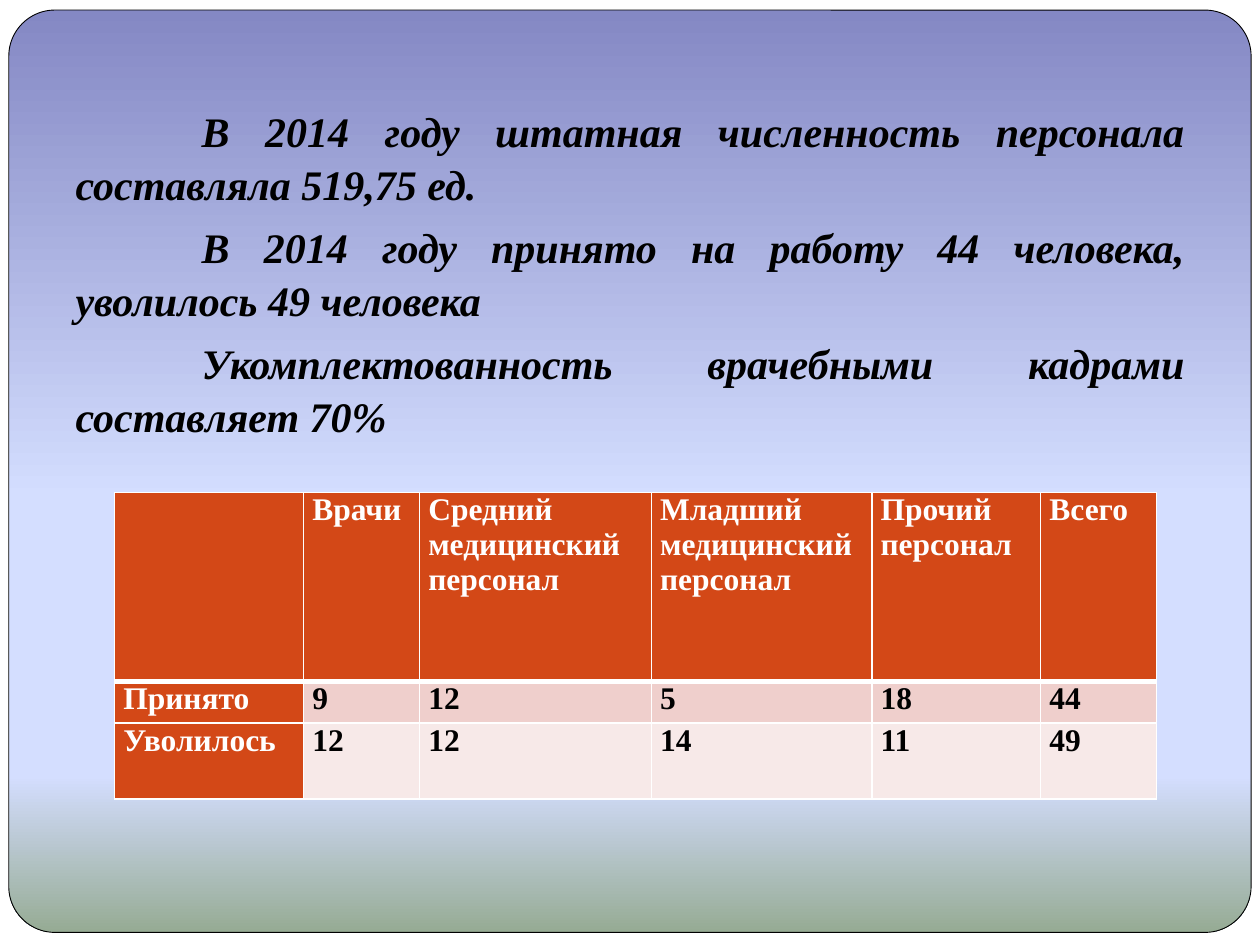
from lxml.etree import SubElement
from pptx import Presentation
from pptx.dml.color import RGBColor
from pptx.enum.shapes import MSO_SHAPE as Preset
from pptx.enum.text import MSO_ANCHOR as Anchor, MSO_AUTO_SIZE as AutoSize, PP_ALIGN as Align
from pptx.oxml import parse_xml
from pptx.oxml.ns import nsdecls, qn
from pptx.util import Inches, Pt

COLUMNS, ROWS = 100, 75
BACKDROP = [(0, "8488C4"), (53, "D4DEFF"), (83, "D4DEFF"), (100, "96AB94")]
STATEMENTS = [
    "В 2014 году штатная численность персонала составляла 519,75 ед.",
    "В 2014 году принято на работу 44 человека, уволилось 49 человека",
    "Укомплектованность врачебными кадрами составляет 70%",
]
STAFF = [
    ["", "Врачи", "Средний медицинский персонал", "Младший медицинский персонал",
     "Прочий персонал", "Всего"],
    ["Принято", "9", "12", "5", "18", "44"],
    ["Уволилось", "12", "12", "14", "11", "49"],
]
STAFF_WIDTHS = [15, 9.2, 18.4, 17.5, 13.4, 9.2]
STAFF_HEIGHTS = [15, 3.3, 6]


def color(hex_value):
    return RGBColor.from_string(hex_value)


class StaffSlide:
    font = "Times New Roman"
    ink, paper, accent = "000000", "FFFFFF", "D34817"
    bands = ["EFCFCC", "F7E9E8"]

    def __init__(self, deck):
        self.slide = deck.slides.add_slide(deck.slide_layouts[1])
        self.column = deck.slide_width / COLUMNS
        self.row = deck.slide_height / ROWS
        title = self.slide.shapes.title
        title.element.getparent().remove(title.element)

    def area(self, left, top, width, height):
        """Turn grid columns and rows into slide lengths."""
        return (round(left * self.column), round(top * self.row),
                round(width * self.column), round(height * self.row))

    def set_text(self, paragraph, text, size, ink, italic=False):
        paragraph.text = text
        paragraph.alignment = Align.JUSTIFY
        for run in paragraph.runs:
            font = run.font
            font.name, font.size = self.font, Pt(size)
            font.bold, font.italic = True, italic
            font.color.rgb = color(ink)

    def backdrop(self, cells, stops):
        """Put a rounded panel with a vertical gradient behind everything."""
        panel = self.slide.shapes.add_shape(Preset.ROUNDED_RECTANGLE, *self.area(*cells))
        panel.adjustments[0] = 0.05
        panel.shadow.inherit = False
        panel.line.color.rgb = color(self.ink)
        panel.line.width = Pt(0.5)
        panel.fill.gradient()
        panel.fill.gradient_angle = 270
        stop_list = panel.element.spPr.find(".//" + qn("a:gsLst"))
        stop_list.clear()
        for share, shade in stops:
            stop = SubElement(stop_list, qn("a:gs"), pos=str(share * 1000))
            SubElement(stop, qn("a:srgbClr"), val=shade)
        self.slide.shapes.element.insert(2, panel.element)

    def body(self, cells, statements):
        holder = self.slide.placeholders[1]
        holder.left, holder.top, holder.width, holder.height = self.area(*cells)
        frame = holder.text_frame
        frame.auto_size = AutoSize.NONE
        frame.vertical_anchor = Anchor.TOP
        frame.margin_top = Inches(0.53)
        for index, statement in enumerate(statements):
            paragraph = frame.add_paragraph() if index else frame.paragraphs[0]
            self.set_text(paragraph, statement, 24, self.ink, italic=True)
            paragraph.space_before = Pt(5.8)
            paragraph.line_spacing = 1.05
            properties = paragraph._p.get_or_add_pPr()
            properties.set("marL", "0")
            properties.set("indent", str(Inches(1)))
            SubElement(properties, qn("a:buNone"))

    def borders(self, cell, **widths):
        """Draw cell edges; the keywords L, R, T and B give points."""
        properties = cell._tc.get_or_add_tcPr()
        for index, (side, width) in enumerate(widths.items()):
            properties.insert(index, parse_xml(
                f'<a:ln{side} {nsdecls("a")} w="{Pt(width)}"><a:solidFill>'
                f'<a:srgbClr val="{self.paper}"/></a:solidFill></a:ln{side}>'))

    def table(self, left, top, widths, heights, records):
        cells = self.area(left, top, sum(widths), sum(heights))
        grid = self.slide.shapes.add_table(len(heights), len(widths), *cells).table
        grid.first_row = grid.horz_banding = False
        for column, width in zip(grid.columns, widths):
            column.width = round(width * self.column)
        for row, height in zip(grid.rows, heights):
            row.height = round(height * self.row)
        for r, record in enumerate(records):
            for c, text in enumerate(record):
                heading = r == 0 or c == 0
                cell = grid.cell(r, c)
                cell.margin_left = cell.margin_right = Inches(0.07)
                cell.margin_top = cell.margin_bottom = 0
                cell.fill.solid()
                cell.fill.fore_color.rgb = color(self.accent if heading else self.bands[r - 1])
                self.borders(cell, L=1, R=1, T=3 if r == 1 else 1, B=3 if r == 0 else 1)
                self.set_text(cell.text_frame.paragraphs[0], text, 18,
                              self.paper if heading else self.ink)


def main():
    deck = Presentation()
    deck.slide_width, deck.slide_height = Inches(10), Inches(7.5)
    staff = StaffSlide(deck)
    staff.backdrop((0.7, 0.8, 98.6, 73.2), BACKDROP)
    staff.body((5, 2.9, 90, 64.1), STATEMENTS)
    staff.table(9.1, 39.1, STAFF_WIDTHS, STAFF_HEIGHTS, STAFF)
    deck.save("out.pptx")


if __name__ == "__main__":
    main()
